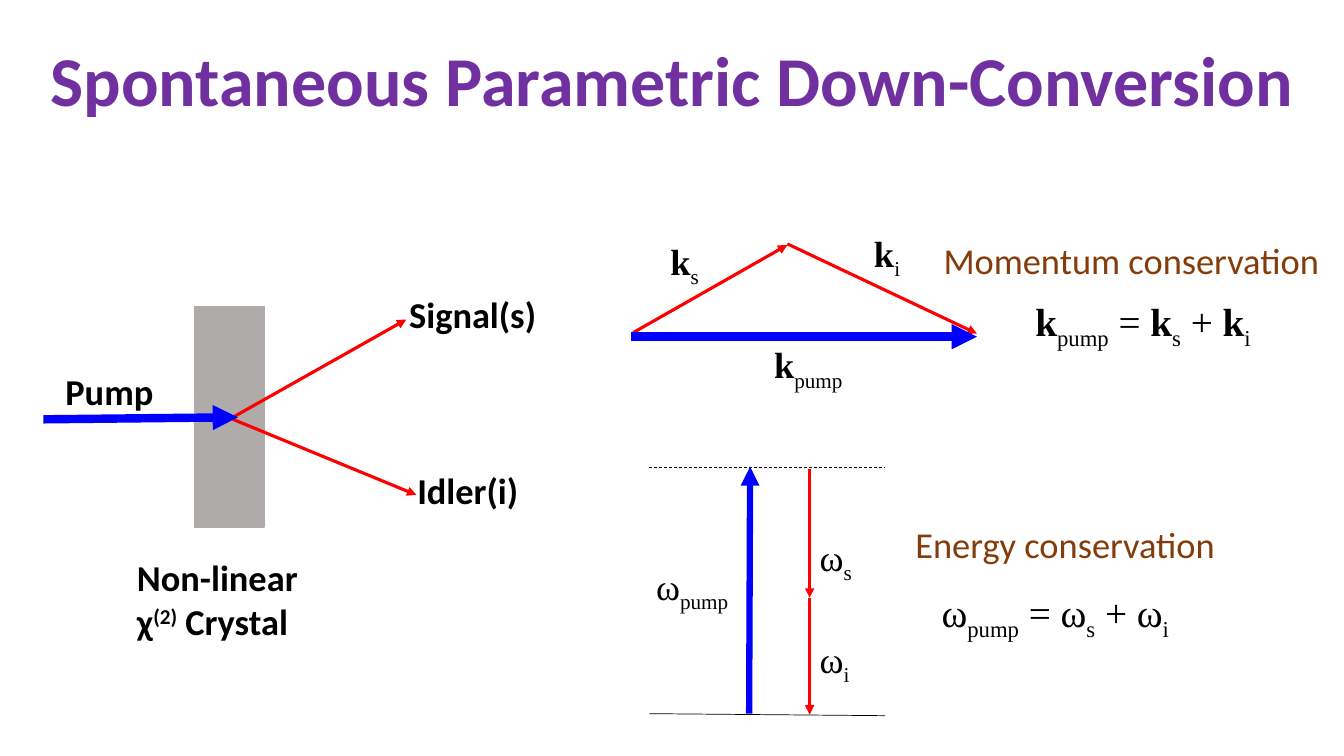
from dataclasses import dataclass
from typing import NamedTuple

from lxml import etree
from pptx import Presentation
from pptx.dml.color import RGBColor
from pptx.enum.dml import MSO_LINE
from pptx.enum.shapes import MSO_CONNECTOR, MSO_SHAPE
from pptx.enum.text import MSO_ANCHOR, MSO_AUTO_SIZE, PP_ALIGN
from pptx.oxml.ns import qn
from pptx.util import Inches, Pt

DASH = MSO_LINE.DASH
STRAIGHT = MSO_CONNECTOR.STRAIGHT
RECTANGLE = MSO_SHAPE.RECTANGLE
MIDDLE = MSO_ANCHOR.MIDDLE
NO_FIT = MSO_AUTO_SIZE.NONE
FIT_SHAPE = MSO_AUTO_SIZE.SHAPE_TO_FIT_TEXT
CENTER = PP_ALIGN.CENTER

SANS = "Calibri"
SERIF = "Times New Roman"
COLORS = {
    "title": "7030A0",
    "crystal": "AFABAB",
    "pump": "0000FF",
    "photon": "FF0000",
    "text": "000000",
    "law": "843C0B",
}


class Part(NamedTuple):
    text: str
    bold: bool = False
    shift: int = 0


@dataclass
class Label:
    left: float
    top: float
    width: float
    height: float
    lines: list[list[Part]]
    font: str = SANS
    size: int = 26
    color: str = "text"
    wrap: bool = False


@dataclass
class Line:
    begin: tuple[float, float]
    end: tuple[float, float]
    color: str = "photon"
    width: float = 2.25
    arrow: bool = True
    dashed: bool = False


def word(text: str) -> list[list[Part]]:
    """Return a single bold line."""
    return [[Part(text, True)]]


def symbol(base: str, index: str, bold: bool = False) -> list[Part]:
    """Return a symbol followed by its subscript."""
    return [Part(base, bold), Part(index, False, -25)]


def equation(base: str, bold: bool = False) -> list[list[Part]]:
    """Return the line stating that pump equals signal plus idler."""
    return [[
        *symbol(base, "pump", bold), Part(" = "),
        *symbol(base, "s", bold), Part(" + "),
        *symbol(base, "i", bold),
    ]]


LINES = [
    Line((2.31, 4.14), (4.03, 3.17)),
    Line((2.31, 4.16), (4.13, 4.91)),
    Line((0.43, 4.16), (2.36, 4.14), "pump", 6),
    Line((6.44, 4.64), (8.78, 4.64), "text", 0.5, arrow=False, dashed=True),
    Line((6.44, 7.08), (8.78, 7.1), "text", 0.5, arrow=False),
    Line((7.43, 7.08), (7.44, 4.63), "pump", 4.5),
    Line((8.03, 4.65), (8.03, 5.93)),
    Line((8.03, 5.93), (8.03, 7.09)),
    Line((6.28, 3.3), (7.81, 2.43)),
    Line((7.81, 2.42), (9.69, 3.31)),
    Line((6.26, 3.34), (9.69, 3.34), "pump", 6),
]

CRYSTAL = [
    [Part("Non-linear", True)],
    [Part("χ", True), Part("(2)", True, 30), Part(" Crystal", True)],
]

LABELS = [
    Label(1.26, 5.46, 1.82, 0.98, CRYSTAL),
    Label(0.55, 3.61, 1.09, 0.54, word("Pump")),
    Label(3.96, 2.85, 1.48, 0.54, word("Signal(s)")),
    Label(4.04, 4.59, 1.22, 0.54, word("Idler(i)")),
    Label(7.58, 3.35, 0.96, 0.54, [symbol("k", "pump", True)], SERIF),
    Label(6.55, 2.32, 0.5, 0.54, [symbol("k", "s", True)], SERIF),
    Label(8.57, 2.24, 0.47, 0.54, [symbol("k", "i", True)], SERIF),
    Label(6.41, 5.55, 0.99, 0.54, [symbol("ω", "pump")], SERIF),
    Label(8.03, 6.27, 0.51, 0.54, [symbol("ω", "i")], SERIF),
    Label(8.03, 5.26, 0.54, 0.54, [symbol("ω", "s")], SERIF),
    Label(9.26, 2.31, 3.96, 0.54, [[Part("Momentum conservation")]], color="law"),
    Label(8.98, 5.13, 3.21, 0.54, [[Part("Energy conservation")]], color="law"),
    Label(10.17, 2.9, 2.66, 0.57, equation("k", True), SERIF, 28, wrap=True),
    Label(9.24, 5.79, 2.68, 0.57, equation("ω"), SERIF, 28),
]


def rgb(name: str) -> RGBColor:
    """Return the named colour."""
    return RGBColor.from_string(COLORS[name])


def format_run(r, font: str, size: int, color: str, bold: bool) -> None:
    """Set the typeface, size, colour and weight of a run."""
    r.font.name = font
    r.font.size = Pt(size)
    r.font.color.rgb = rgb(color)
    r.font.bold = bold


def add_title(s, text: str) -> None:
    """Fill and place the title placeholder."""
    sp = s.shapes.title
    sp.left, sp.top = Inches(0.11), Inches(0.11)
    sp.width, sp.height = Inches(13.12), Inches(1.45)
    tf = sp.text_frame
    tf.text = text
    tf.auto_size = NO_FIT
    tf.vertical_anchor = MIDDLE
    p = tf.paragraphs[0]
    p.alignment = CENTER
    p.line_spacing = 0.9
    format_run(p.runs[0], SANS, 50, "title", True)


def add_crystal(s) -> None:
    """Draw the crystal block."""
    sp = s.shapes.add_shape(
        RECTANGLE, Inches(1.93), Inches(3.04), Inches(0.69), Inches(2.19))
    sp.shadow.inherit = False
    sp.fill.solid()
    sp.fill.fore_color.rgb = rgb("crystal")
    sp.line.color.rgb = rgb("crystal")
    sp.line.width = Pt(1)


def add_line(s, line: Line) -> None:
    """Draw a straight line, with an arrowhead if wanted."""
    points = [Inches(v) for v in (*line.begin, *line.end)]
    sp = s.shapes.add_connector(STRAIGHT, *points)
    sp.line.color.rgb = rgb(line.color)
    sp.line.width = Pt(line.width)
    if line.dashed:
        sp.line.dash_style = DASH
    props = sp._element.spPr
    if line.arrow:
        etree.SubElement(props.find(qn("a:ln")), qn("a:tailEnd"), type="triangle")
    etree.SubElement(props, qn("a:effectLst"))


def add_label(s, label: Label) -> None:
    """Draw a text box with mixed runs."""
    box = (label.left, label.top, label.width, label.height)
    tf = s.shapes.add_textbox(*[Inches(v) for v in box]).text_frame
    tf.word_wrap = label.wrap
    tf.auto_size = FIT_SHAPE
    for i, parts in enumerate(label.lines):
        p = tf.add_paragraph() if i else tf.paragraphs[0]
        for part in parts:
            r = p.add_run()
            r.text = part.text
            format_run(r, label.font, label.size, label.color, part.bold)
            if part.shift:
                r._r.get_or_add_rPr().set("baseline", str(part.shift * 1000))


def main() -> None:
    """Build and save the slide."""
    prs = Presentation()
    prs.slide_width, prs.slide_height = Inches(13.33), Inches(7.5)
    s = prs.slides.add_slide(prs.slide_layouts.get_by_name("Title Only"))
    add_title(s, "Spontaneous Parametric Down-Conversion")
    add_crystal(s)
    for line in LINES:
        add_line(s, line)
    for label in LABELS:
        add_label(s, label)
    prs.save("out.pptx")


if __name__ == "__main__":
    main()
